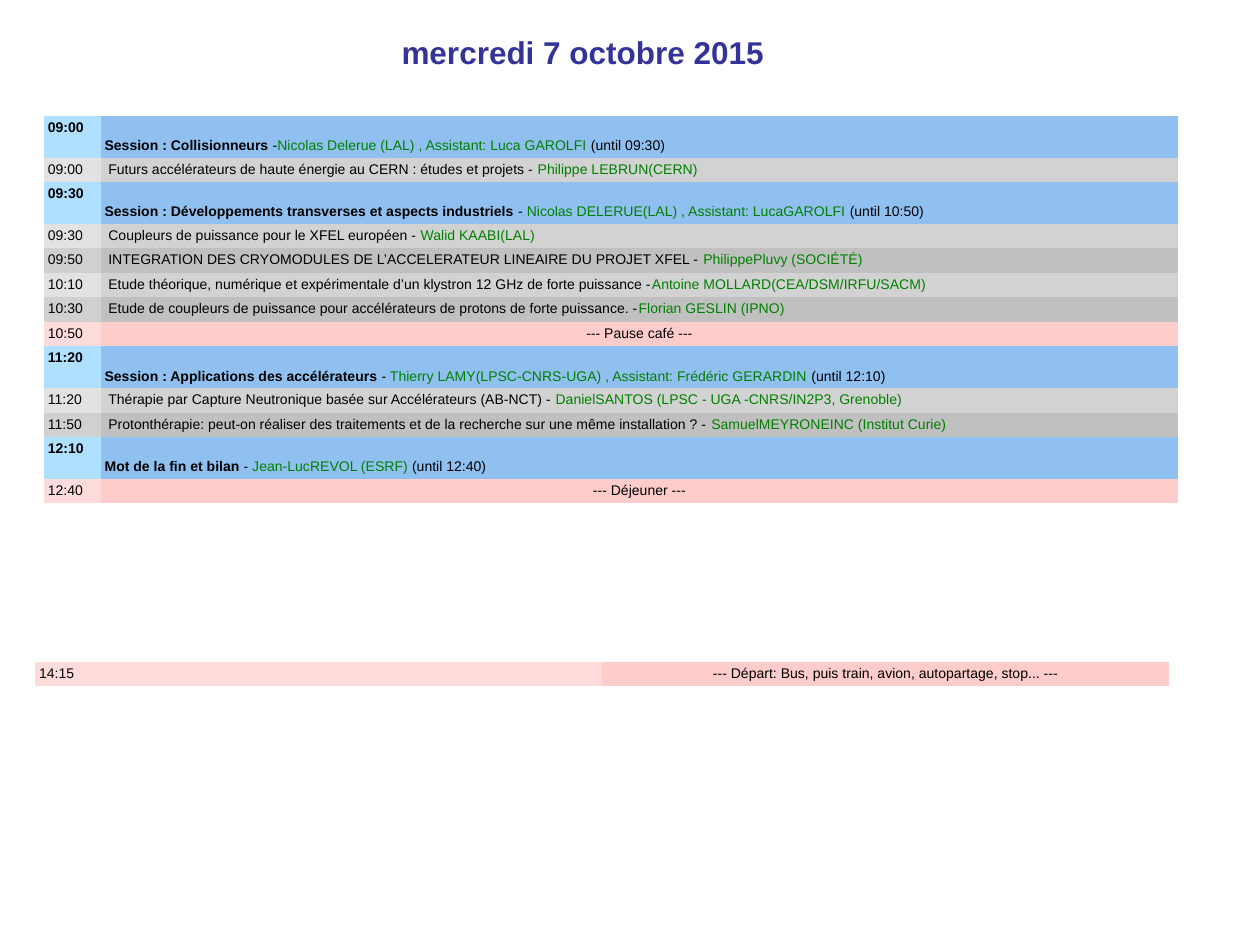
from pptx import Presentation
from pptx.dml.color import RGBColor
from pptx.enum.text import MSO_ANCHOR, MSO_AUTO_SIZE, PP_ALIGN
from pptx.oxml.ns import qn
from pptx.util import Inches, Pt

BLACK, GREEN, NAVY = "000000", "008000", "333399"
SHORT_ROW, TALL_ROW, INSET = 0.195, 0.33, 0.03
NO_STYLE = "{2D5ABB26-0587-4C30-8999-92F81FD0307C}"

FILLS = {
    "session": ("B0E0FF", "90C0F0"),
    "talk": ("E2E2E2", "D2D2D2"),
    "shaded talk": ("D0D0D0", "C0C0C0"),
    "break": ("FFDCDC", "FFCCCC"),
}

MORNING = [
    ("session", "09:00", "Session : Collisionneurs",
     "Nicolas Delerue (LAL) , Assistant: Luca GAROLFI ", "(until 09:30)"),
    ("talk", "09:00", "Futurs accélérateurs de haute énergie au CERN : études et projets - ",
     "Philippe LEBRUN(CERN)"),
    ("session", "09:30", "Session : Développements transverses et aspects industriels",
     " Nicolas DELERUE(LAL) , Assistant: LucaGAROLFI ", "(until 10:50)"),
    ("talk", "09:30", "Coupleurs de puissance pour le XFEL européen - ", "Walid KAABI(LAL)"),
    ("shaded talk", "09:50",
     "INTEGRATION DES CRYOMODULES DE L’ACCELERATEUR LINEAIRE DU PROJET XFEL - ",
     "PhilippePluvy (SOCIÉTÉ)"),
    ("talk", "10:10",
     "Etude théorique, numérique et expérimentale d’un klystron 12 GHz de forte puissance -",
     "Antoine MOLLARD(CEA/DSM/IRFU/SACM)"),
    ("shaded talk", "10:30",
     "Etude de coupleurs de puissance pour accélérateurs de protons de forte puissance. -",
     "Florian GESLIN (IPNO)"),
    ("break", "10:50", "--- Pause café ---"),
    ("session", "11:20", "Session : Applications des accélérateurs",
     " Thierry LAMY(LPSC-CNRS-UGA) , Assistant: Frédéric GERARDIN ", "(until 12:10)"),
    ("talk", "11:20", "Thérapie par Capture Neutronique basée sur Accélérateurs (AB-NCT) - ",
     "DanielSANTOS (LPSC - UGA -CNRS/IN2P3, Grenoble)"),
    ("shaded talk", "11:50",
     "Protonthérapie: peut-on réaliser des traitements et de la recherche "
     "sur une même installation ? - ", "SamuelMEYRONEINC (Institut Curie)"),
    ("session", "12:10", "Mot de la fin et bilan", " Jean-LucREVOL (ESRF) ", "(until 12:40)"),
    ("break", "12:40", "--- Déjeuner ---"),
]
DEPARTURE = [("break", "14:15", "--- Départ: Bus, puis train, avion, autopartage, stop... ---")]


def color(value):
    """Turn a hex string into a colour."""
    return RGBColor.from_string(value)


def set_attributes(target, values):
    """Set each named attribute of the target."""
    for name, value in values.items():
        setattr(target, name, value)


def add_run(paragraph, text, size, hex_color, bold=False):
    """Append one formatted run to a paragraph."""
    run = paragraph.add_run()
    run.text = text
    set_attributes(run.font, {"name": "Arial", "size": Pt(size), "bold": bold})
    run.font.color.rgb = color(hex_color)


def fill_cell(cell, fill, runs, **formats):
    """Give a cell its fill, insets and runs of text."""
    cell.fill.solid()
    cell.fill.fore_color.rgb = color(fill)
    margins = {f"margin_{side}": Inches(INSET) for side in ("left", "right", "top", "bottom")}
    set_attributes(cell, margins | formats)
    for text, hex_color, bold in runs:
        add_run(cell.text_frame.paragraphs[0], text, 8, hex_color, bold)


def fill_row(cells, kind, time, title, speaker="", ending=""):
    """Write one programme entry into a row of two cells."""
    time_cell, entry_cell = cells
    time_fill, entry_fill = FILLS[kind]
    is_session = kind == "session"
    fill_cell(time_cell, time_fill, [(time, BLACK, is_session)])
    runs = [(title, BLACK, is_session), (" -" if is_session else "", BLACK, False),
            (speaker, GREEN, False), (ending, BLACK, False)]
    formats = {"vertical_anchor": MSO_ANCHOR.BOTTOM} if is_session else {}
    if "talk" in kind:
        formats["margin_left"] = Inches(2 * INSET)
    fill_cell(entry_cell, entry_fill, [run for run in runs if run[0]], **formats)
    if kind == "break":
        entry_cell.text_frame.paragraphs[0].alignment = PP_ALIGN.CENTER


def add_programme(slide, left, top, widths, entries):
    """Add a table with one row for each programme entry."""
    heights = [TALL_ROW if entry[0] == "session" else SHORT_ROW for entry in entries]
    frame = slide.shapes.add_table(len(entries), len(widths), Inches(left), Inches(top),
                                   Inches(sum(widths)), Inches(sum(heights)))
    table = frame.table
    set_attributes(table, {"first_row": False, "horz_banding": False})
    table._tbl.tblPr.find(qn("a:tableStyleId")).text = NO_STYLE
    for column, width in zip(table.columns, widths):
        column.width = Inches(width)
    for row, height, entry in zip(table.rows, heights, entries):
        row.height = Inches(height)
        fill_row(row.cells, *entry)


def set_title(slide, text):
    """Place and format the title placeholder."""
    title = slide.shapes.title
    set_attributes(title, {"left": Inches(3.07), "top": Inches(0.21),
                           "width": Inches(3.11), "height": Inches(0.4)})
    set_attributes(title.text_frame, {"word_wrap": False, "auto_size": MSO_AUTO_SIZE.NONE,
                                      "vertical_anchor": MSO_ANCHOR.MIDDLE})
    add_run(title.text_frame.paragraphs[0], text, 18, NAVY, True)


def main():
    """Build the programme of the day."""
    presentation = Presentation()
    set_attributes(presentation, {"slide_width": Inches(10), "slide_height": Inches(7.5)})
    slide = presentation.slides.add_slide(presentation.slide_layouts.get_by_name("Title Only"))
    set_title(slide, "mercredi 7 octobre 2015")
    add_programme(slide, 0.35, 0.92, (0.45, 8.55), MORNING)
    add_programme(slide, 0.28, 5.25, (4.5, 4.5), DEPARTURE)
    presentation.save("out.pptx")


if __name__ == "__main__":
    main()
